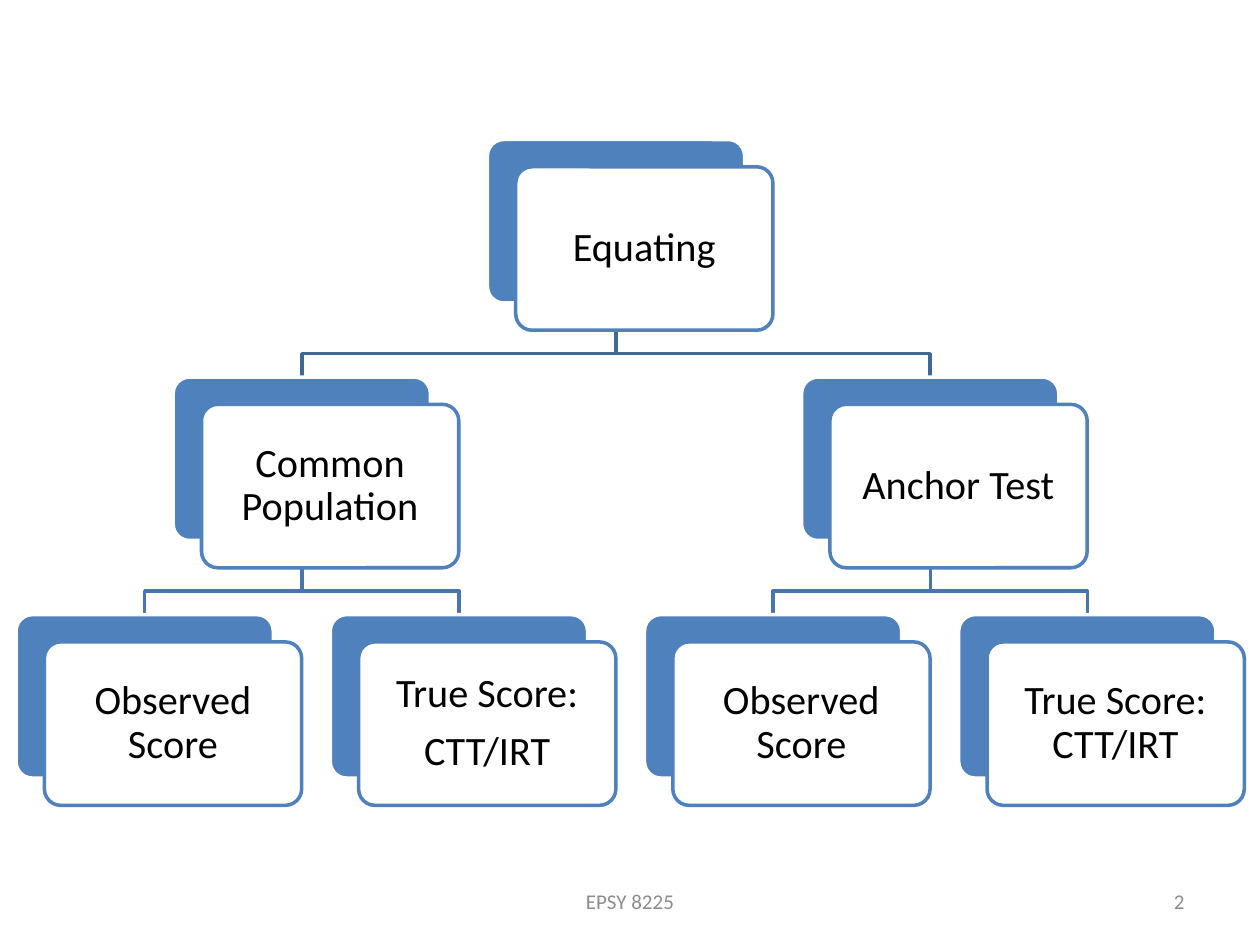
"""Build the slide with the tree of equating designs."""
import pptx
import pptx.util
import pptx.dml.color
import pptx.enum.shapes
import pptx.enum.text

Pt = pptx.util.Pt
RGB = pptx.dml.color.RGBColor
ALIGN = pptx.enum.text.PP_ALIGN
ROUND = pptx.enum.shapes.MSO_SHAPE.ROUNDED_RECTANGLE

BLUE = RGB(0x4F, 0x81, 0xBD)
WHITE = RGB(0xFF, 0xFF, 0xFF)
BLACK = RGB(0x00, 0x00, 0x00)
GREY = RGB(0x8C, 0x8C, 0x8C)
LINKS = [RGB(0x3F, 0x67, 0x97), RGB(0x48, 0x75, 0xAC)]

WIDE, HIGH = 147, 93.4
LEFT, TOP = 9.2, 79.7
COL, ROW = 179.55, 135.75
SHIFT_X, SHIFT_Y = 16.2, 15.6
TURN = 13.3


def write(shape, text, size=23, color=BLACK, align=ALIGN.CENTER, line=1.0, after=0):
    frame = shape.text_frame
    frame.word_wrap = True
    frame.vertical_anchor = pptx.enum.text.MSO_ANCHOR.MIDDLE
    frame.text = text
    for para in frame.paragraphs:
        para.alignment = align
        para.line_spacing = line
        para.space_after = Pt(after)
        para.font.name = "Calibri"
        para.font.size = Pt(size)
        para.font.color.rgb = color


def card(left, top, fill, edge):
    box = slide.shapes.add_shape(ROUND, Pt(left), Pt(top), Pt(WIDE), Pt(HIGH))
    box.adjustments[0] = 0.1
    box.shadow.inherit = False
    box.fill.solid()
    box.fill.fore_color.rgb = fill
    box.line.color.rgb = edge
    box.line.width = Pt(2)
    return box


deck = pptx.Presentation()
deck.slide_width, deck.slide_height = Pt(720), Pt(540)
slide = deck.slides.add_slide(deck.slide_layouts[6])

nodes = [
    ("Equating", 1.5, 0, None),
    ("Common Population", 0.5, 1, 0),
    ("Observed Score", 0, 2, 1),
    ("True Score:\nCTT/IRT", 1, 2, 1),
    ("Anchor Test", 2.5, 1, 0),
    ("Observed Score", 2, 2, 4),
    ("True Score: CTT/IRT", 3, 2, 4),
]

for text, col, row, up in nodes[1:]:
    start = LEFT + nodes[up][1] * COL + WIDE / 2
    end = LEFT + col * COL + WIDE / 2
    top = TOP + row * ROW
    base = top - ROW + HIGH
    path = slide.shapes.build_freeform(Pt(start), Pt(base))
    bends = [(start, top - TURN), (end, top - TURN), (end, top)]
    path.add_line_segments([(Pt(x), Pt(y)) for x, y in bends], close=False)
    link = path.convert_to_shape()
    link.shadow.inherit = False
    link.fill.background()
    link.line.color.rgb = LINKS[row - 1]
    link.line.width = Pt(2)

for text, col, row, up in nodes:
    left, top = LEFT + col * COL, TOP + row * ROW
    card(left, top, BLUE, WHITE)
    face = card(left + SHIFT_X, top + SHIFT_Y, WHITE, BLUE)
    write(face, text, line=0.9, after=8)

for text, left, wide, align in [
    ("EPSY 8225", 246, 228, ALIGN.CENTER),
    ("2", 516, 168, ALIGN.RIGHT),
]:
    foot = slide.shapes.add_textbox(Pt(left), Pt(500.5), Pt(wide), Pt(28.75))
    write(foot, text, size=12, color=GREY, align=align)

deck.save("out.pptx")
